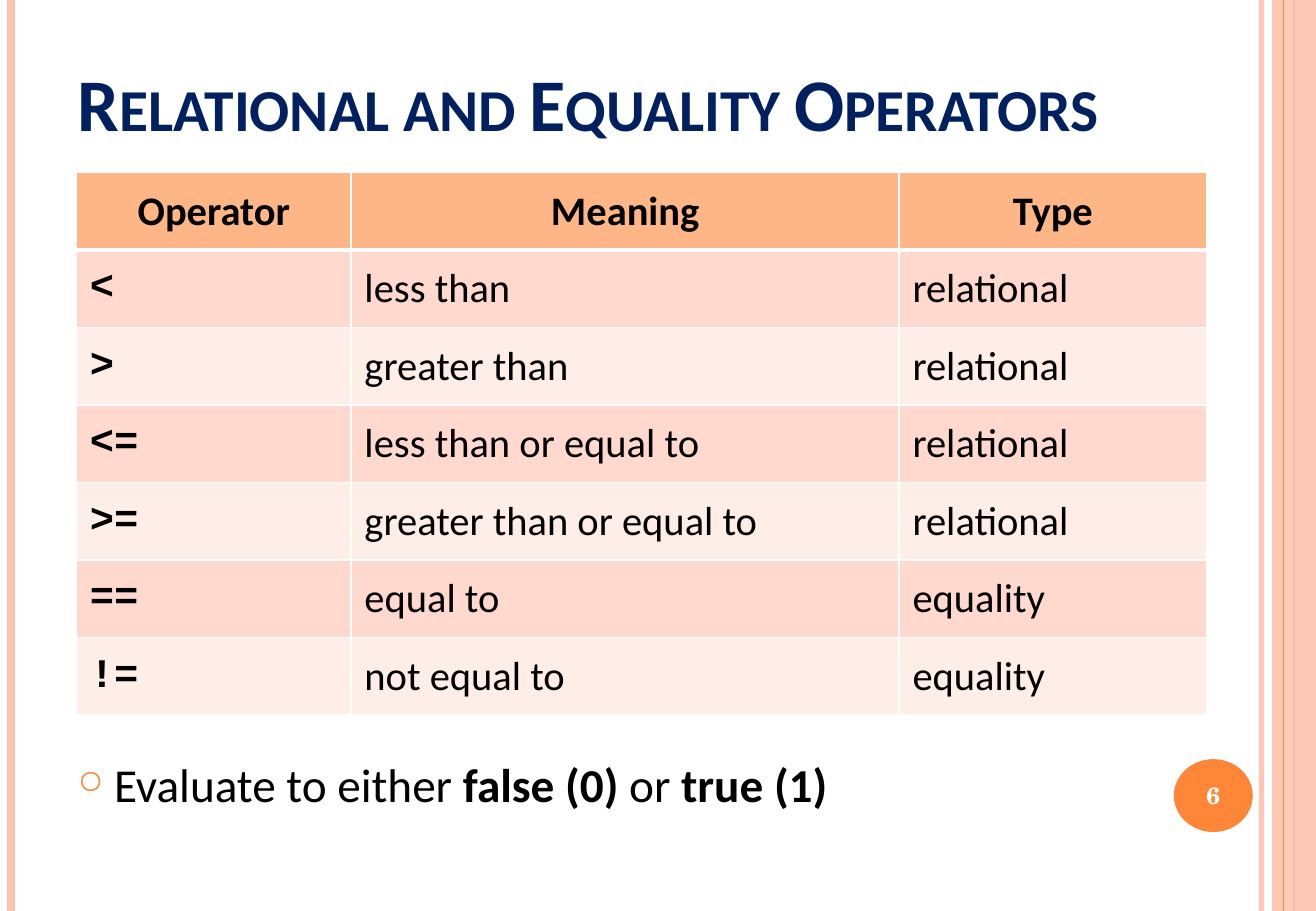
"""Build the slide on relational and equality operators."""
import lxml.etree
import pptx
import pptx.dml.color
import pptx.enum.shapes
import pptx.enum.text
import pptx.oxml.ns
import pptx.util

Inches = pptx.util.Inches
Pt = pptx.util.Pt
RGBColor = pptx.dml.color.RGBColor
Align = pptx.enum.text.PP_ALIGN
Anchor = pptx.enum.text.MSO_ANCHOR
Shape = pptx.enum.shapes.MSO_SHAPE

ORANGE = RGBColor(0xFE, 0x86, 0x37)
PEACH = RGBColor(0xFE, 0xC3, 0xAE)
HEADER = RGBColor(0xFE, 0xB6, 0x87)
BANDS = (RGBColor(0xFF, 0xED, 0xE8), RGBColor(0xFF, 0xD9, 0xCE))
NAVY = RGBColor(0x00, 0x20, 0x60)
BLACK = RGBColor(0, 0, 0)
WHITE = RGBColor(0xFF, 0xFF, 0xFF)
SLIDE_WIDTH, SLIDE_HEIGHT = 10.83, 7.5


def add_xml(parent, tag, **attributes):
    """Append a DrawingML element and return it."""
    return lxml.etree.SubElement(parent, pptx.oxml.ns.qn(tag), attributes)


def set_all(target, values):
    """Set every attribute in a dict of format values."""
    for name, value in values.items():
        setattr(target, name, value)


def set_opacity(element, percent):
    """Make the colours of an element partly transparent."""
    for colour in element.iter(pptx.oxml.ns.qn("a:srgbClr")):
        add_xml(colour, "a:alpha", val=str(percent * 1000))


class SlideBuilder:
    """Hold the text style and the current slide."""

    text_style = {"name": "Calibri", "size": Pt(24), "bold": False}
    cell_margins = {
        "margin_left": Inches(0.11), "margin_right": Inches(0.11),
        "margin_top": Inches(0.05), "margin_bottom": Inches(0.05),
        "vertical_anchor": Anchor.MIDDLE,
    }

    def __init__(self, slide):
        """Keep the slide to draw on."""
        self.slide = slide
        self.shapes = slide.shapes

    def text_run(self, paragraph, text, color=BLACK, **changes):
        """Add a run in the base style with some changes."""
        run = paragraph.add_run()
        run.text = text
        set_all(run.font, {**self.text_style, **changes})
        run.font.color.rgb = color
        return run

    def stripe(self, x, color, width, opacity=100):
        """Draw a line down the whole slide."""
        line = self.shapes.add_connector(
            pptx.enum.shapes.MSO_CONNECTOR.STRAIGHT,
            Inches(x), 0, Inches(x), Inches(SLIDE_HEIGHT))
        line.line.color.rgb = color
        line.line.width = Pt(width)
        if opacity < 100:
            set_opacity(line._element.spPr, opacity)
        add_xml(line._element.spPr, "a:effectLst")

    def block(self, kind, box, color, opacity=100):
        """Draw a filled shape without an outline."""
        shape = self.shapes.add_shape(kind, *map(Inches, box))
        shape.shadow.inherit = False
        shape.fill.solid()
        shape.fill.fore_color.rgb = color
        shape.line.fill.background()
        if opacity < 100:
            set_opacity(shape._element.spPr, opacity)
        return shape

    def text_box(self, box, anchor=Anchor.TOP):
        """Add a wrapping text box and return its first paragraph."""
        frame = self.shapes.add_textbox(*map(Inches, box)).text_frame
        set_all(frame, {"word_wrap": True, "vertical_anchor": anchor})
        return frame.paragraphs[0]

    def title(self, box, text):
        """Add the small-caps heading."""
        heading = self.text_run(self.text_box(box, Anchor.BOTTOM), text, NAVY,
                                size=Pt(44), bold=True)
        heading._r.get_or_add_rPr().set("cap", "small")

    def bullet(self, box, parts):
        """Add a bulleted line of (text, bold) parts."""
        paragraph = self.text_box(box)
        paragraph.space_before = Pt(6)
        properties = paragraph._p.get_or_add_pPr()
        properties.set("marL", str(int(Inches(0.3))))
        properties.set("indent", str(int(Inches(-0.3))))
        add_xml(add_xml(properties, "a:buClr"), "a:srgbClr", val=str(ORANGE))
        add_xml(properties, "a:buSzPct", val="70000")
        add_xml(properties, "a:buChar", char="○")
        for text, bold in parts:
            self.text_run(paragraph, text, size=Pt(28), bold=bold)

    def page_number(self, box, text):
        """Add the round page number."""
        frame = self.block(Shape.OVAL, box, ORANGE).text_frame
        set_all(frame, {"margin_left": 0, "margin_right": 0,
                        "vertical_anchor": Anchor.MIDDLE})
        frame.paragraphs[0].alignment = Align.CENTER
        self.text_run(frame.paragraphs[0], text, WHITE,
                      name="TeX Gyre Schola", size=Pt(14), bold=True)

    def cell(self, cell, text, fill, bottom, alignment, **changes):
        """Fill, border and letter one table cell."""
        set_all(cell, self.cell_margins)
        properties = cell._tc.get_or_add_tcPr()
        for side, width in {"L": 1, "R": 1, "T": 1, "B": bottom}.items():
            border = add_xml(properties, f"a:ln{side}", w=str(int(Pt(width))))
            add_xml(add_xml(border, "a:solidFill"), "a:srgbClr", val=str(WHITE))
        cell.fill.solid()
        cell.fill.fore_color.rgb = fill
        paragraph = cell.text_frame.paragraphs[0]
        set_all(paragraph, {"alignment": alignment, "space_before": Pt(4.8)})
        self.text_run(paragraph, text, **changes)

    def table(self, box, widths, rows):
        """Add a banded table whose first row is the header."""
        table = self.shapes.add_table(
            len(rows), len(widths), *map(Inches, box)).table
        for column, width in zip(table.columns, widths):
            column.width = Inches(width)
        for r, row in enumerate(rows):
            for c, text in enumerate(row):
                if r == 0:
                    self.cell(table.cell(r, c), text, HEADER, 3, Align.CENTER,
                              bold=True)
                else:
                    font = {"name": "Courier New", "bold": True} if c == 0 else {}
                    self.cell(table.cell(r, c), text, BANDS[r % 2], 1,
                              Align.LEFT, **font)


def main():
    """Build and save the presentation."""
    deck = pptx.Presentation()
    set_all(deck, {"slide_width": Inches(SLIDE_WIDTH),
                   "slide_height": Inches(SLIDE_HEIGHT)})
    page = SlideBuilder(deck.slides.add_slide(deck.slide_layouts[6]))

    page.stripe(10.38, PEACH, 3, 93)
    page.stripe(0.09, PEACH, 4.5)
    page.stripe(10.65, ORANGE, 1.5)
    page.block(Shape.RECTANGLE, (10.47, 0, 0.36, SLIDE_HEIGHT), PEACH, 87)
    page.stripe(10.56, ORANGE, 0.75)
    page.page_number((9.66, 6.25, 0.65, 0.6), "6")

    page.title((0.54, 0.3, 9.66, 0.95), "Relational and Equality Operators")
    page.bullet((0.54, 6.17, 8.85, 0.92), [
        ("Evaluate to either ", False), ("false (0) ", True),
        ("or ", False), ("true (1)", True)])
    page.table((0.63, 1.42, 9.3, 4.47), (2.26, 4.51, 2.53), [
        ("Operator", "Meaning", "Type"),
        ("<", "less than", "relational"),
        (">", "greater than", "relational"),
        ("<=", "less than or equal to", "relational"),
        (">=", "greater than or equal to", "relational"),
        ("==", "equal to", "equality"),
        ("!=", "not equal to", "equality")])
    deck.save("out.pptx")


if __name__ == "__main__":
    main()
